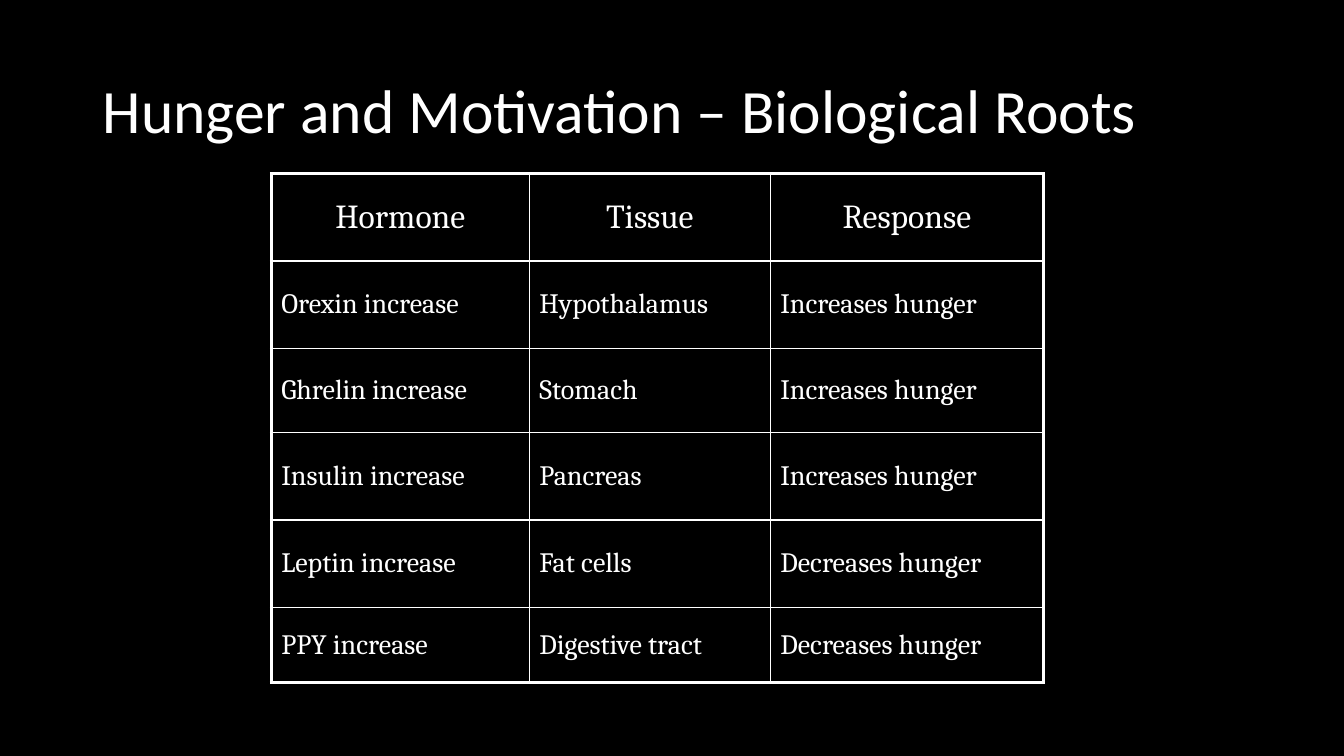
from lxml import etree
from pptx import Presentation
from pptx.dml.color import RGBColor
from pptx.enum.text import MSO_ANCHOR, PP_ALIGN
from pptx.oxml.ns import qn
from pptx.util import Inches, Pt

MIDDLE = MSO_ANCHOR.MIDDLE
LEFT, CENTER = PP_ALIGN.LEFT, PP_ALIGN.CENTER

COLORS = {"background": "000000", "text": "FFFFFF", "border": "FFFFFF"}
TITLE_FONT, TABLE_FONT = "Calibri", "Cambria"
OUTER_LINE, INNER_LINE = 2.25, 1

COLUMN_WIDTHS = [2.56, 2.39, 2.71]
ROW_HEIGHTS = [0.87, 0.87, 0.83, 0.87, 0.87, 0.74]
HORMONES = [
    ("Hormone", "Tissue", "Response"),
    ("Orexin increase", "Hypothalamus", "Increases hunger"),
    ("Ghrelin increase", "Stomach", "Increases hunger"),
    ("Insulin increase", "Pancreas", "Increases hunger"),
    ("Leptin increase", "Fat cells", "Decreases hunger"),
    ("PPY increase", "Digestive tract", "Decreases hunger"),
]


def write_text(tf, text, *, font, size, align=LEFT, line_spacing=None, space_before=0):
    p = tf.paragraphs[0]
    p.alignment = align
    p.line_spacing = line_spacing
    p.space_before = Pt(space_before)
    r = p.add_run()
    r.text = text
    r.font.name = font
    r.font.size = Pt(size)
    r.font.color.rgb = RGBColor.from_string(COLORS["text"])


def set_borders(cell, widths):
    """Draw solid borders; widths gives points for left, right, top, bottom."""
    tc_pr = cell._tc.get_or_add_tcPr()
    for side, width in zip("LRTB", widths):
        ln = etree.SubElement(tc_pr, qn(f"a:ln{side}"), w=str(Pt(width)))
        fill = etree.SubElement(ln, qn("a:solidFill"))
        etree.SubElement(fill, qn("a:srgbClr"), val=COLORS["border"])


class SlideBuilder:
    def __init__(self, prs):
        self.s = prs.slides.add_slide(prs.slide_layouts[6])
        fill = self.s.background.fill
        fill.solid()
        fill.fore_color.rgb = RGBColor.from_string(COLORS["background"])

    def title(self, text, left, top, width, height):
        sp = self.s.shapes.add_textbox(*map(Inches, (left, top, width, height)))
        tf = sp.text_frame
        tf.word_wrap = True
        tf.vertical_anchor = MIDDLE
        write_text(tf, text, font=TITLE_FONT, size=44, line_spacing=0.9)

    def table(self, rows, left, top, widths, heights):
        box = map(Inches, (left, top, sum(widths), sum(heights)))
        table = self.s.shapes.add_table(len(rows), len(widths), *box).table
        table.first_row = table.horz_banding = False
        for column, width in zip(table.columns, widths):
            column.width = Inches(width)
        for row, height in zip(table.rows, heights):
            row.height = Inches(height)
        last_row, last_col = len(rows) - 1, len(widths) - 1
        for i, row in enumerate(rows):
            size, align = (24, CENTER) if i == 0 else (20, LEFT)
            for j, text in enumerate(row):
                cell = table.cell(i, j)
                edges = (j == 0, j == last_col, i == 0, i == last_row)
                set_borders(cell, [OUTER_LINE if e else INNER_LINE for e in edges])
                cell.fill.background()
                cell.vertical_anchor = MIDDLE
                write_text(cell.text_frame, text, font=TABLE_FONT, size=size,
                           align=align, space_before=size * 0.2)


def main():
    prs = Presentation()
    prs.slide_width, prs.slide_height = Inches(13.33), Inches(7.5)
    slide = SlideBuilder(prs)
    slide.title("Hunger and Motivation – Biological Roots", 0.92, 0.4, 11.5, 1.45)
    slide.table(HORMONES, 2.69, 1.72, COLUMN_WIDTHS, ROW_HEIGHTS)
    prs.save("out.pptx")


if __name__ == "__main__":
    main()
